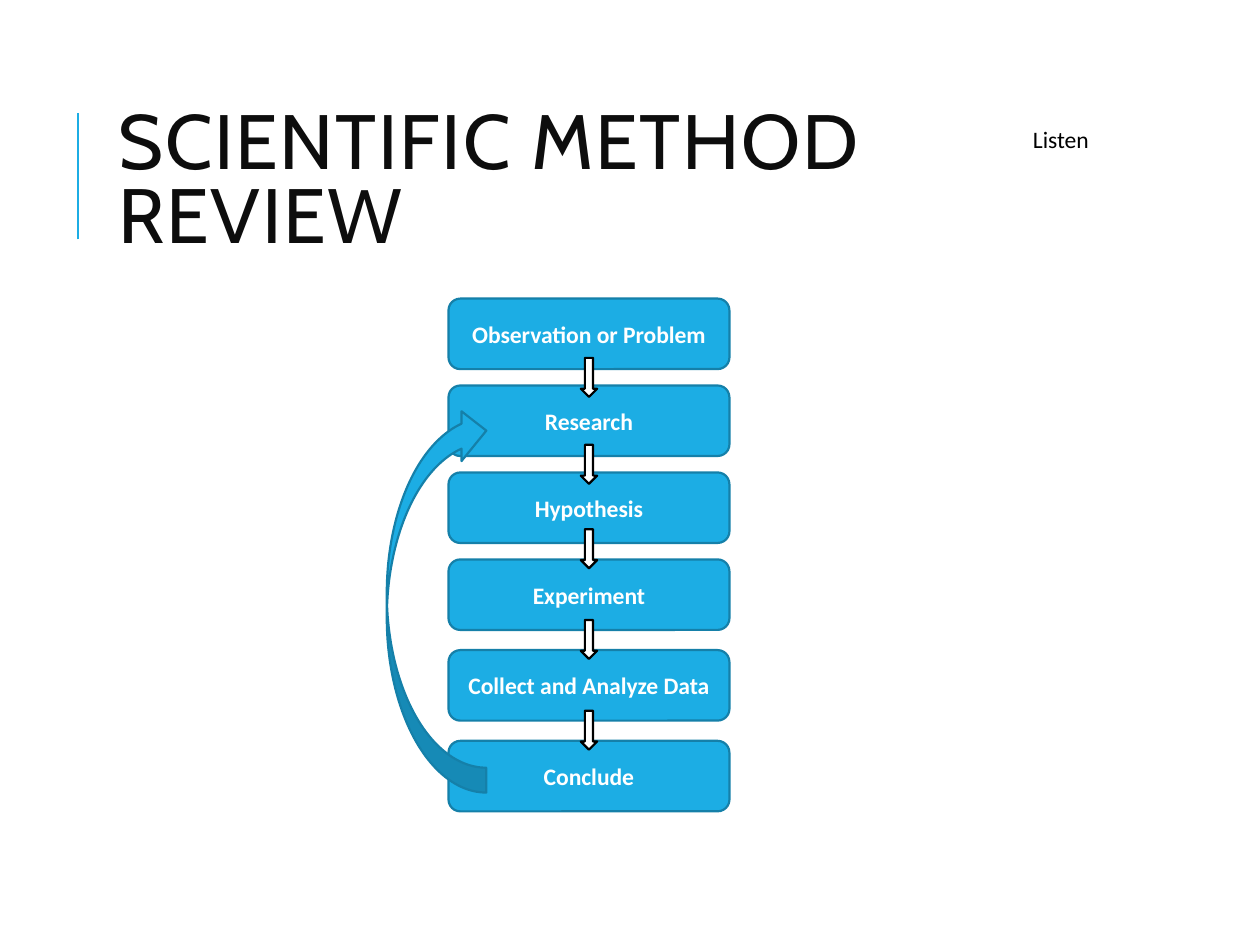
from lxml import etree
from pptx import Presentation
from pptx.dml.color import RGBColor
from pptx.enum.shapes import MSO_CONNECTOR, MSO_SHAPE
from pptx.enum.text import MSO_ANCHOR, MSO_AUTO_SIZE, PP_ALIGN
from pptx.oxml.ns import qn
from pptx.util import Inches, Pt

STRAIGHT = MSO_CONNECTOR.STRAIGHT
ROUNDED = MSO_SHAPE.ROUNDED_RECTANGLE
DOWN_ARROW = MSO_SHAPE.DOWN_ARROW
CURVED_ARROW = MSO_SHAPE.CURVED_LEFT_ARROW
MIDDLE = MSO_ANCHOR.MIDDLE
TOP = MSO_ANCHOR.TOP
NO_AUTOFIT = MSO_AUTO_SIZE.NONE
LEFT, CENTER = PP_ALIGN.LEFT, PP_ALIGN.CENTER

BLUE, DARK_BLUE = "1CADE4", "1580A9"
WHITE, BLACK, TITLE_COLOR = "FFFFFF", "000000", "0D0D0D"
BOX_LEFT, BOX_WIDTH, BOX_HEIGHT = 3.56, 2.23, 0.56
ARROW_WIDTH, ARROW_HEIGHT = 0.13, 0.31
STEPS = [
    ("Observation or Problem", 2.37),
    ("Research", 3.06),
    ("Hypothesis", 3.75),
    ("Experiment", 4.44),
    ("Collect and Analyze Data", 5.16),
    ("Conclude", 5.88),
]
ARROW_TOPS = [2.84, 3.53, 4.2, 4.92, 5.64]


def color(value):
    return RGBColor.from_string(value)


def write_text(shape, text, size=13.5, font="Calibri", fill=BLACK, bold=False,
               align=LEFT, anchor=TOP, line_spacing=None, letter_spacing=None):
    frame = shape.text_frame
    frame.word_wrap = True
    frame.auto_size = NO_AUTOFIT
    frame.vertical_anchor = anchor
    para = frame.paragraphs[0]
    para.alignment = align
    para.line_spacing = line_spacing
    span = para.add_run()
    span.text = text
    span.font.size = Pt(size)
    span.font.name = font
    span.font.bold = bold
    span.font.color.rgb = color(fill)
    if letter_spacing is not None:
        span.font._element.set("spc", str(int(letter_spacing * 100)))


def add_preset(page, kind, left, top, width, height, fill=BLUE, line=DARK_BLUE):
    shape = page.shapes.add_shape(
        kind, Inches(left), Inches(top), Inches(width), Inches(height))
    shape.shadow.inherit = False
    shape.fill.solid()
    shape.fill.fore_color.rgb = color(fill)
    shape.line.color.rgb = color(line)
    shape.line.width = Pt(1.25)
    return shape


def add_rule(page, x, top, bottom):
    rule = page.shapes.add_connector(
        STRAIGHT, Inches(x), Inches(bottom), Inches(x), Inches(top))
    rule.line.color.rgb = color(BLUE)
    rule.line.width = Pt(1.5)
    etree.SubElement(rule._element.spPr, qn("a:effectLst"))


def add_title(page, text):
    title = page.shapes.title
    title.left, title.top = Inches(0.84), Inches(0.64)
    title.width, title.height = Inches(7.97), Inches(1.64)
    write_text(title, text, size=44, font="Cabin", fill=TITLE_COLOR,
               anchor=MIDDLE, line_spacing=0.8, letter_spacing=1)


def add_step(page, text, top):
    box = add_preset(page, ROUNDED, BOX_LEFT, top, BOX_WIDTH, BOX_HEIGHT)
    write_text(box, text, fill=WHITE, bold=True, align=CENTER, anchor=MIDDLE)


def add_label(page, text, left, top, width, height):
    label = page.shapes.add_textbox(
        Inches(left), Inches(top), Inches(width), Inches(height))
    write_text(label, text)


def main():
    deck = Presentation()
    deck.slide_width, deck.slide_height = Inches(10), Inches(7.5)
    page = deck.slides.add_slide(deck.slide_layouts[5])

    add_rule(page, 0.62, 0.9, 1.9)
    add_title(page, "SCIENTIFIC METHOD REVIEW")
    for text, top in STEPS:
        add_step(page, text, top)
    arrow_left = BOX_LEFT + (BOX_WIDTH - ARROW_WIDTH) / 2
    for top in ARROW_TOPS:
        add_preset(page, DOWN_ARROW, arrow_left, top, ARROW_WIDTH, ARROW_HEIGHT,
                   fill=WHITE, line=BLACK)
    loop = add_preset(page, CURVED_ARROW, 3.07, 3.22, 0.79, 3.07)
    loop.rotation = 180
    add_label(page, "Listen", 8.1, 0.94, 1.7, 0.33)

    deck.save("out.pptx")


if __name__ == "__main__":
    main()
